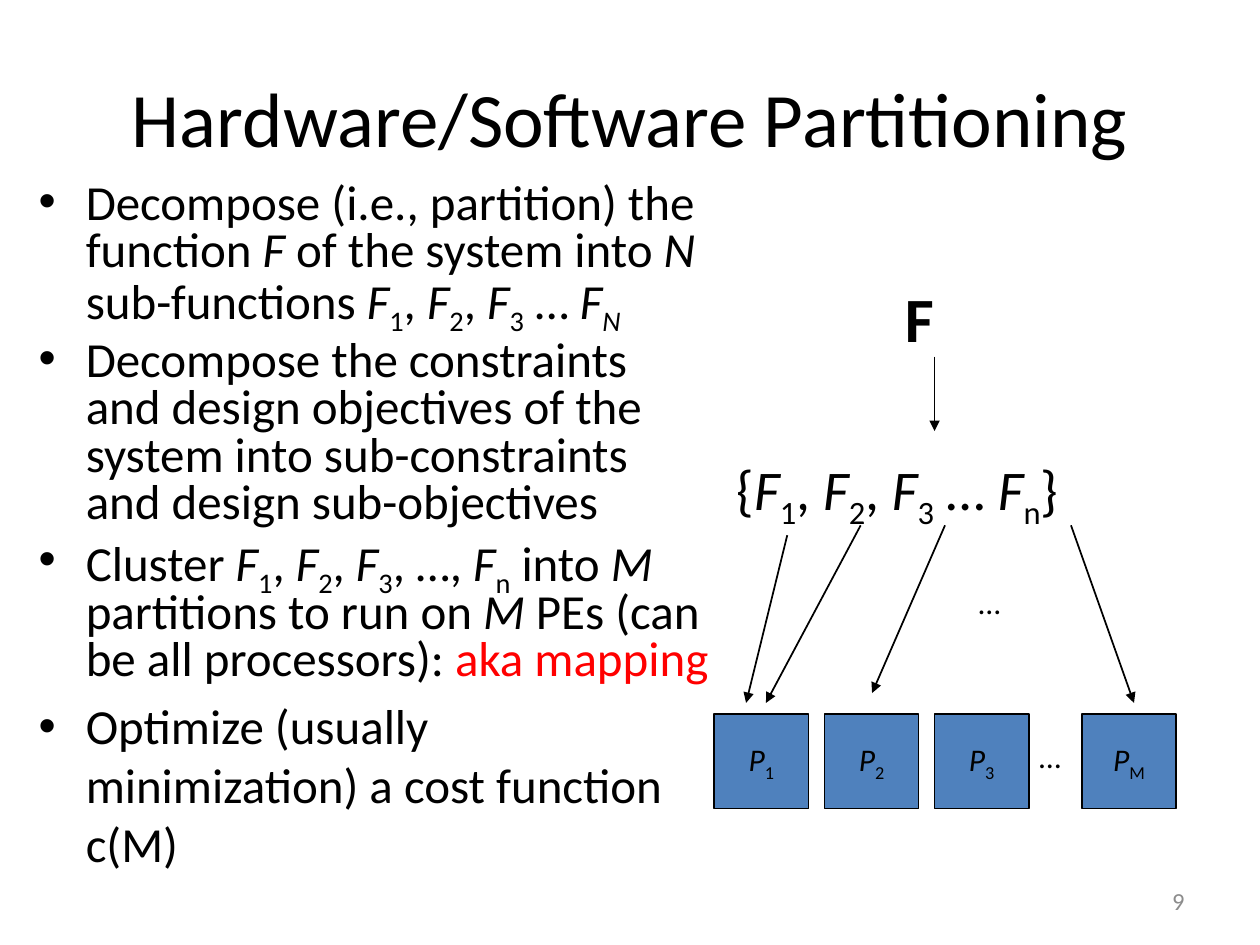
from lxml.etree import SubElement
from pptx import Presentation
from pptx.dml.color import RGBColor
from pptx.enum.shapes import MSO_CONNECTOR as Connector, MSO_SHAPE as Shape
from pptx.enum.text import MSO_ANCHOR as Anchor, PP_ALIGN as Align
from pptx.oxml.ns import qn
from pptx.util import Cm, Pt

BLACK, RED, GRAY, BLUE = "000000", "FF0000", "8C8C8C", "4F81BD"
FUNCTIONS = "/F|_1|, |/F|_2|, |/F|_3"
BULLETS = [
    (f"Decompose (i.e., partition) the function |/F| of the system into |/N"
     f"| sub-functions |{FUNCTIONS}| … |/F|_/N", 0.8),
    ("Decompose the constraints and design objectives of the system into "
     "sub-constraints and design sub-objectives", 0.8),
    (f"Cluster |{FUNCTIONS}|, …, |/F|_n| into |/M| partitions to run on |/M"
     "| PEs (can be all processors): |!aka mapping", 0.8),
    ("Optimize (usually minimization) a cost function c(M)", 1.0),
]


def rgb(value):
    """Turn a hex string into a colour."""
    return RGBColor.from_string(value)


def write(para, text, size, color=BLACK, bold=False, align=Align.LEFT):
    """Fill a paragraph; '|' parts spans, led by _ (subscript), / (italic) or ! (red)."""
    para.alignment = align
    for piece in text.split("|"):
        words = piece.lstrip("_/!")
        marks = piece[:len(piece) - len(words)]
        span = para.add_run()
        span.text = words
        font = span.font
        font.name, font.size, font.bold = "Calibri", Pt(size), bold
        font.italic = "/" in marks
        font.color.rgb = rgb(RED if "!" in marks else color)
        if "_" in marks:
            font._element.set("baseline", "-25000")


def add_text(page, left, top, width, height, text="", size=18, anchor=Anchor.TOP, **style):
    """Add a wrapping text box, with a first paragraph if text is given."""
    box = page.shapes.add_textbox(Cm(left), Cm(top), Cm(width), Cm(height))
    frame = box.text_frame
    frame.word_wrap = True
    frame.vertical_anchor = anchor
    if text:
        write(frame.paragraphs[0], text, size, **style)
    return frame


def add_bullets(page, left, top, width, height):
    """Add the bulleted list in the given box."""
    frame = add_text(page, left, top, width, height)
    for index, (text, spacing) in enumerate(BULLETS):
        para = frame.add_paragraph() if index else frame.paragraphs[0]
        write(para, text, 28)
        para.line_spacing = spacing
        para.space_before = Pt(5.6)
        props = para._p.get_or_add_pPr()
        props.set("marL", str(Cm(0.95)))
        props.set("indent", str(-Cm(0.95)))
        SubElement(props, qn("a:buFont")).set("typeface", "Arial")
        SubElement(props, qn("a:buChar")).set("char", "•")


def add_arrow(page, start_x, start_y, end_x, end_y):
    """Draw a straight black arrow."""
    arrow = page.shapes.add_connector(
        Connector.STRAIGHT, Cm(start_x), Cm(start_y), Cm(end_x), Cm(end_y))
    arrow.line.color.rgb = rgb(BLACK)
    arrow.line.width = Pt(1)
    SubElement(arrow.line._get_or_add_ln(), qn("a:tailEnd")).set("type", "triangle")
    SubElement(arrow._element.spPr, qn("a:effectLst"))


def add_processor(page, left, top, side, label):
    """Draw one processor square with its subscripted name."""
    box = page.shapes.add_shape(Shape.RECTANGLE, Cm(left), Cm(top), Cm(side), Cm(side))
    box.shadow.inherit = False
    box.fill.solid()
    box.fill.fore_color.rgb = rgb(BLUE)
    box.line.color.rgb = rgb(BLACK)
    box.line.width = Pt(1)
    box.text_frame.vertical_anchor = Anchor.MIDDLE
    write(box.text_frame.paragraphs[0], f"/P|_{label}", 18, align=Align.CENTER)


def add_mapping(page, left, top):
    """Draw the function, its parts and the processors they map to."""
    add_text(page, left + 3.59, top, 1.7, 1.78, "F", 36, bold=True)
    add_text(page, left + 0.2, top + 3.53, 8.66, 1.6,
             "{|" + FUNCTIONS + "| … |/F|_n|}", 32)
    for label, offset in zip("123M", (0, 2.22, 4.44, 7.41)):
        add_processor(page, left + offset, top + 8.89, 1.9, label)
    for x, y in ((6.3, 9.22), (5.08, 6.12)):
        add_text(page, left + x, top + y, 1.35, 1.27, "…", 18)
    arrows = [
        (4.44, 1.68, 4.44, 3.18),
        (2.95, 5.08, 1.04, 8.66),
        (1.47, 5.28, 0.64, 8.66),
        (4.65, 5.08, 3.18, 8.46),
        (7.19, 5.08, 8.46, 8.66),
    ]
    for start_x, start_y, end_x, end_y in arrows:
        add_arrow(page, left + start_x, top + start_y, left + end_x, top + end_y)


def main():
    """Build and save the slide."""
    deck = Presentation()
    deck.slide_width, deck.slide_height = Cm(25.4), Cm(19.05)
    page = deck.slides.add_slide(deck.slide_layouts[6])
    add_text(page, 1.27, 0.76, 22.86, 3.18, "Hardware/Software Partitioning", 44,
             Anchor.MIDDLE, align=Align.CENTER)
    add_bullets(page, 0.53, 3.56, 14.07, 14.6)
    add_text(page, 18.21, 17.65, 5.92, 1.02, "9", 14, Anchor.MIDDLE,
             color=GRAY, align=Align.RIGHT)
    add_mapping(page, 14.4, 5.51)
    deck.save("out.pptx")


if __name__ == "__main__":
    main()
